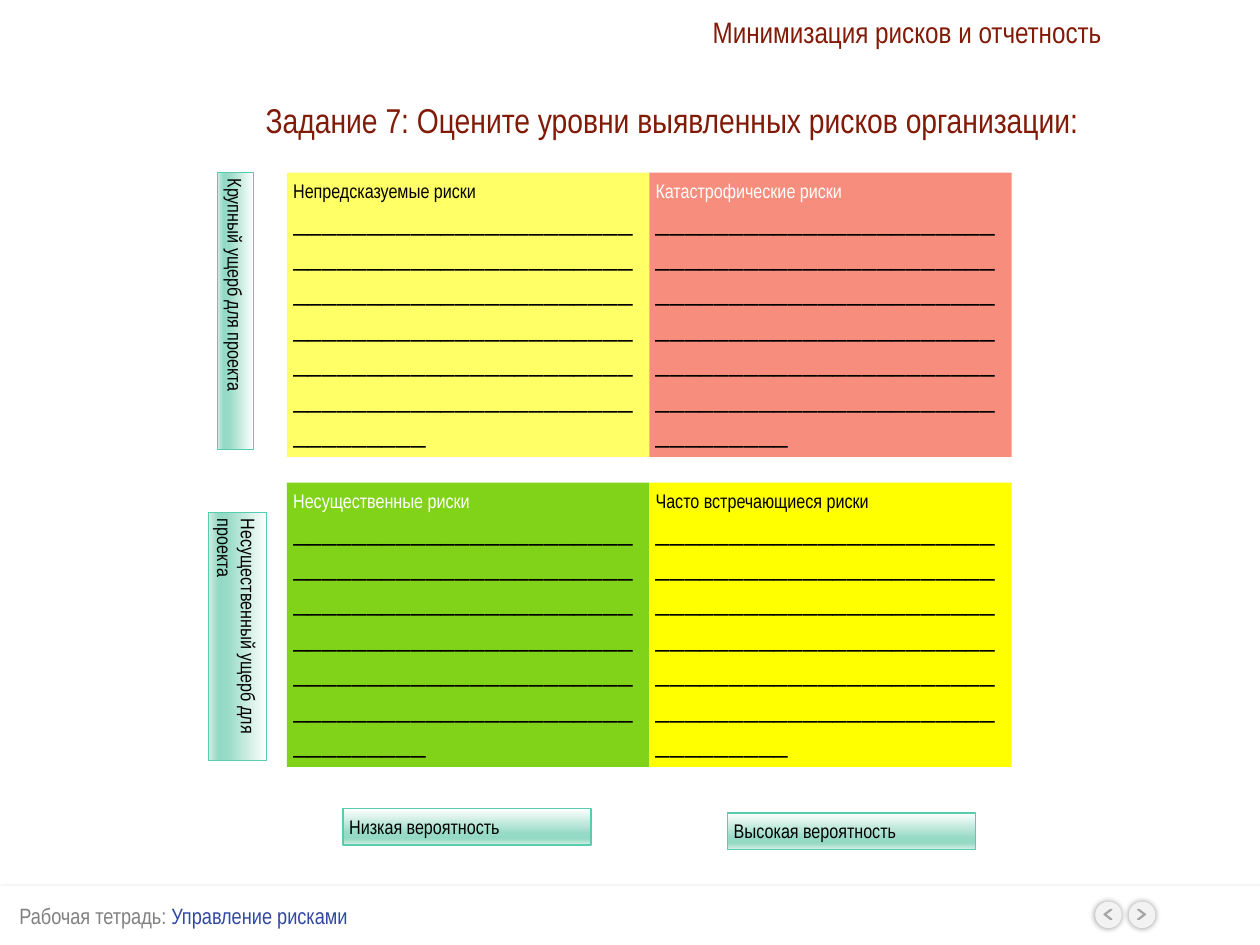
from lxml import etree
from pptx import Presentation
from pptx import util as u
from pptx.dml.color import RGBColor
from pptx.enum import shapes, text
from pptx.oxml import parse_xml
from pptx.oxml.ns import nsdecls, qn

COLORS = {
    "white": "FFFFFF", "black": "000000", "maroon": "821A08",
    "gray": "808080", "blue": "31489F", "button": "F2F2F2", "arrow": "A6A6A6",
    "pale yellow": "FFFF66", "salmon": "F78D7C", "green": "81D31A",
    "yellow": "FFFF00", "mint": "58CCAC",
}
MINT_STOPS = [(0, "FEFFFE"), (68, "97DAC5"), (81, "93D9C3"), (86, "9EDDC8"), (100, "D7EFE7")]
NARROW, RULED = "Arial Narrow", "TeX Gyre Adventor"
BLANK_LINES = "_" * 147

presentation = Presentation()
presentation.slide_width = u.Inches(14.22)
presentation.slide_height = u.Inches(10.67)
slide = presentation.slides.add_slide(presentation.slide_layouts[6])


def add_box(kind, left, top, width, height, fill=None, line=None, shadow=None):
    """Places a shape by percent of slide size; shadow is (alpha %, blur pt, distance pt)."""
    column, row = presentation.slide_width / 100, presentation.slide_height / 100
    shape = slide.shapes.add_shape(
        kind, round(left * column), round(top * row), round(width * column), round(height * row))
    shape.shadow.inherit = False
    if fill:
        shape.fill.solid()
        shape.fill.fore_color.rgb = RGBColor.from_string(COLORS[fill])
    else:
        shape.fill.background()
    if line:
        shape.line.color.rgb = RGBColor.from_string(COLORS[line])
        shape.line.width = u.Pt(1)
    else:
        shape.line.fill.background()
    if shadow:
        alpha, blur, distance = shadow
        effects = shape._element.spPr.find(qn("a:effectLst"))
        outer = etree.SubElement(
            effects, qn("a:outerShdw"), blurRad=str(u.Pt(blur)), dist=str(u.Pt(distance)),
            dir="5400000", algn="ctr", rotWithShape="0")
        color = etree.SubElement(outer, qn("a:srgbClr"), val=COLORS["black"])
        etree.SubElement(color, qn("a:alpha"), val=str(alpha * 1000))
    return shape


def write(shape, *paragraphs, size=16, align="LEFT", wrap=True, right_inset=0.07):
    """Fills a shape; each paragraph is a list of (words, color, font, size or None) runs."""
    frame = shape.text_frame
    frame.word_wrap = wrap
    frame.vertical_anchor = text.MSO_ANCHOR.TOP
    frame.margin_left = frame.margin_top = frame.margin_bottom = u.Inches(0.07)
    frame.margin_right = u.Inches(right_inset)
    for index, runs in enumerate(paragraphs):
        paragraph = frame.add_paragraph() if index else frame.paragraphs[0]
        paragraph.alignment = text.PP_ALIGN[align]
        for words, color, font, run_size in runs:
            run = paragraph.add_run()
            run.text = words
            run.font.name = font
            run.font.size = u.Pt(run_size or size)
            run.font.color.rgb = RGBColor.from_string(COLORS[color])


RECTANGLE = shapes.MSO_SHAPE.RECTANGLE

# Footer with navigation buttons
add_box(RECTANGLE, 0, 93.72, 100, 6.28, fill="white", shadow=(35, 3, 1.8))
for left, flipped in ((86.92, True), (89.59, False)):
    add_box(shapes.MSO_SHAPE.OVAL, left, 95.41, 2.11, 2.81, fill="button", shadow=(40, 5, 0))
    chevron = add_box(shapes.MSO_SHAPE.CHEVRON, left + 0.7, 96.25, 0.63, 1.03,
                      fill="arrow", line="arrow")
    chevron.adjustments[0] = 0.79
    if flipped:
        chevron._element.spPr.xfrm.set("flipH", "1")

# Headings
write(add_box(RECTANGLE, 1.05, 94.85, 27.43, 4.03),
      [("Рабочая тетрадь: ", "gray", NARROW, None),
       ("Управление рисками", "blue", NARROW, None)], size=18, wrap=False)
write(add_box(RECTANGLE, 20.6, 9.84, 66.32, 5.53),
      [("Задание 7: Оцените уровни выявленных рисков организации:", "maroon", NARROW, None)],
      size=28, wrap=False)
write(add_box(RECTANGLE, 56.05, 0.84, 34.6, 4.87),
      [("Минимизация рисков и отчетность", "maroon", NARROW, None)],
      size=24, align="RIGHT", right_inset=0.46)

# Risk matrix
quadrants = [
    [("Непредсказуемые риски", "pale yellow", "black"),
     ("Катастрофические риски", "salmon", "white")],
    [("Несущественные риски", "green", "white"),
     ("Часто встречающиеся риски", "yellow", "black")],
]
for row_index, quadrant_row in enumerate(quadrants):
    for column_index, (heading, fill, color) in enumerate(quadrant_row):
        quadrant = add_box(RECTANGLE, 22.78 + 28.76 * column_index, 18.28 + 32.8 * row_index,
                           28.76, 30.08, fill=fill)
        write(quadrant, [(heading, color, NARROW, None)], [(BLANK_LINES, "black", RULED, 24)])

# Axis labels
stops = "".join(f'<a:gs pos="{position * 1000}"><a:srgbClr val="{color}"/></a:gs>'
                for position, color in MINT_STOPS)
axis_labels = [
    ("Крупный ущерб для проекта", 7.67, 31.02, 22.01, 3.84, 90),
    ("Несущественный ущерб для проекта", 9, 64.29, 19.69, 6.19, 90),
    ("Низкая вероятность", 27.22, 85.57, 19.69, 3.84, 0),
    ("Высокая вероятность", 57.74, 86.04, 19.69, 3.84, 0),
]
for words, left, top, width, height, rotation in axis_labels:
    label = add_box(RECTANGLE, left, top, width, height, line="mint")
    label.rotation = rotation
    properties = label._element.spPr
    properties.replace(properties.find(qn("a:noFill")), parse_xml(
        f'<a:gradFill {nsdecls("a")} rotWithShape="1"><a:gsLst>{stops}</a:gsLst>'
        '<a:lin ang="5400000" scaled="0"/></a:gradFill>'))
    write(label, [(words, "black", NARROW, None)])

presentation.save("out.pptx")
